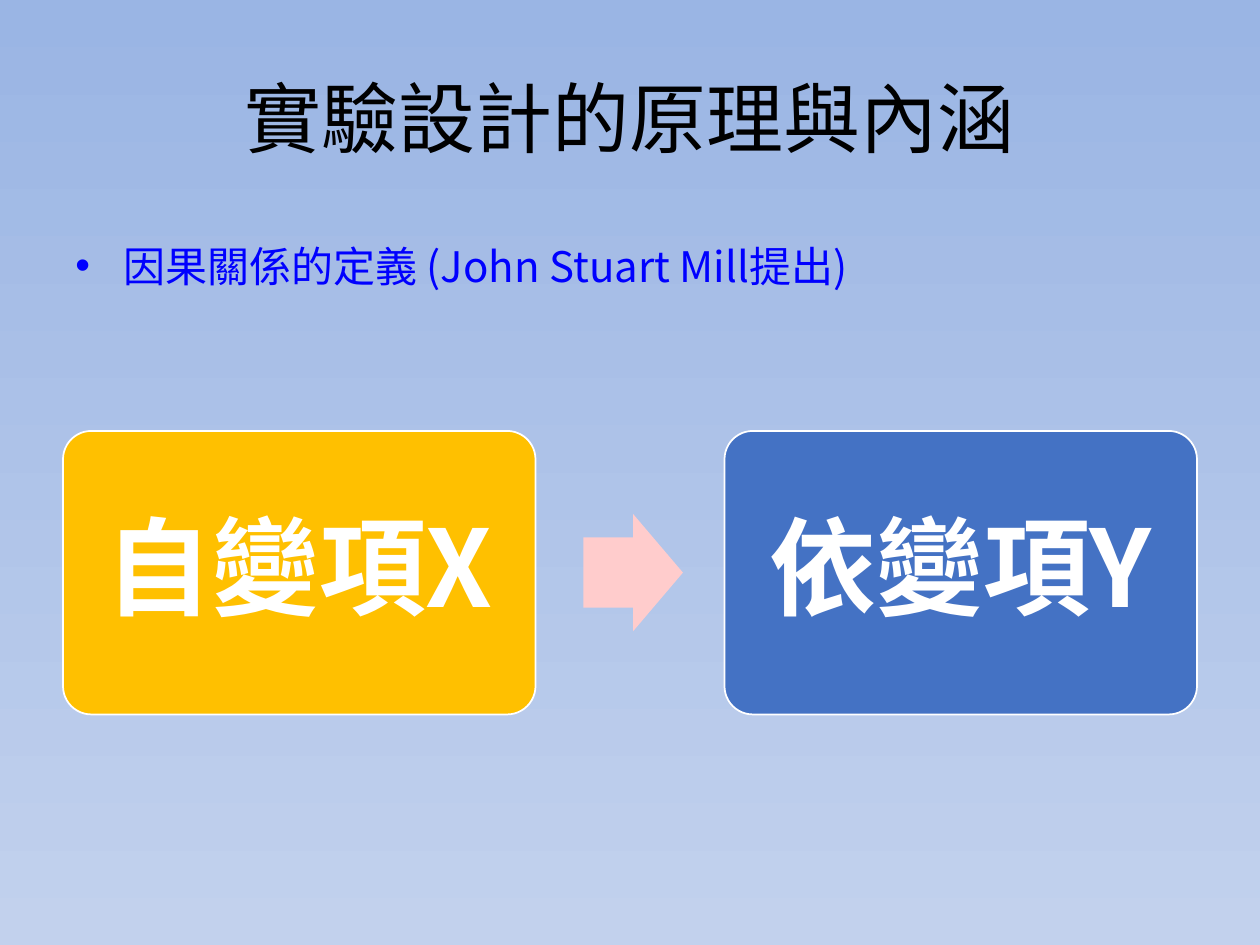
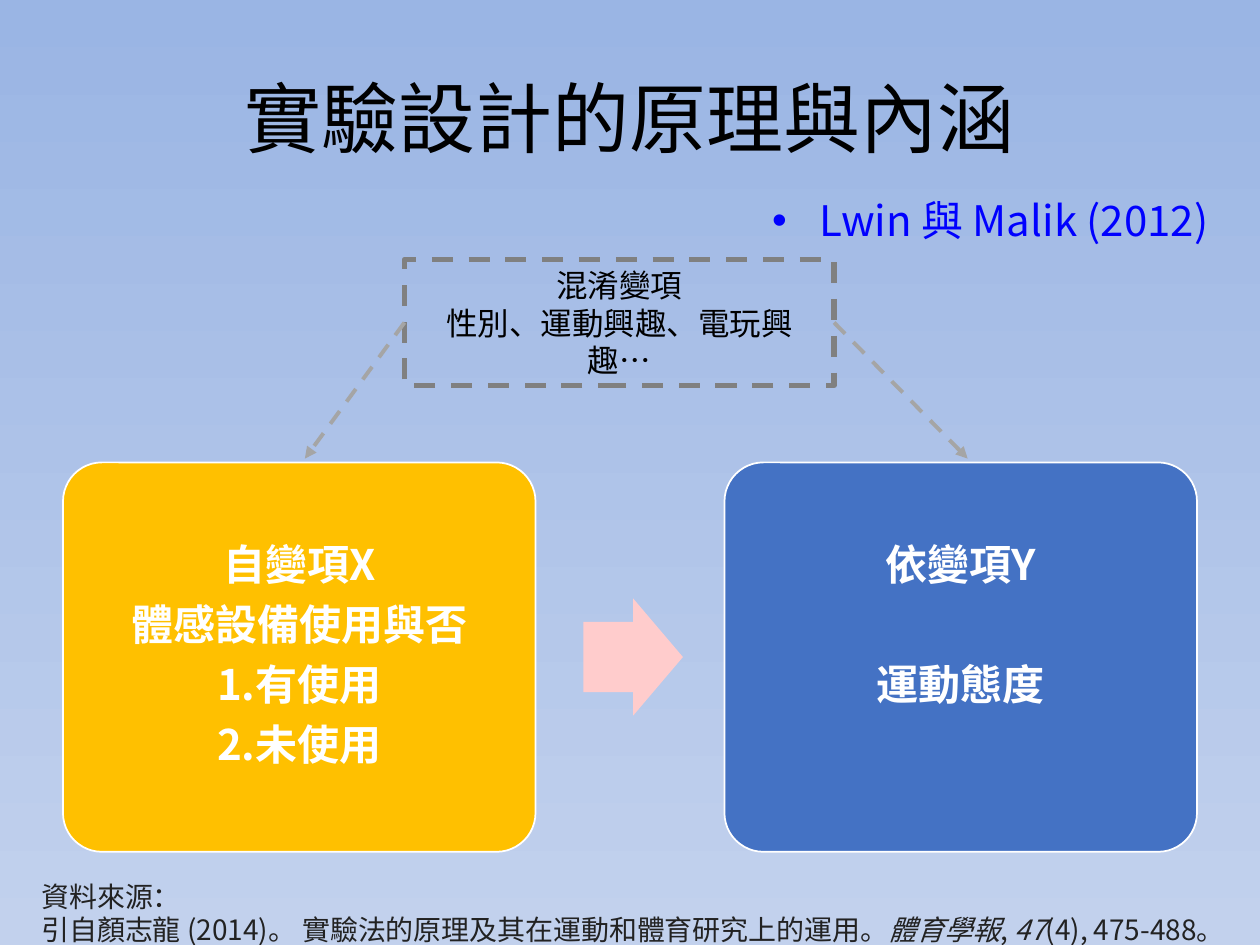
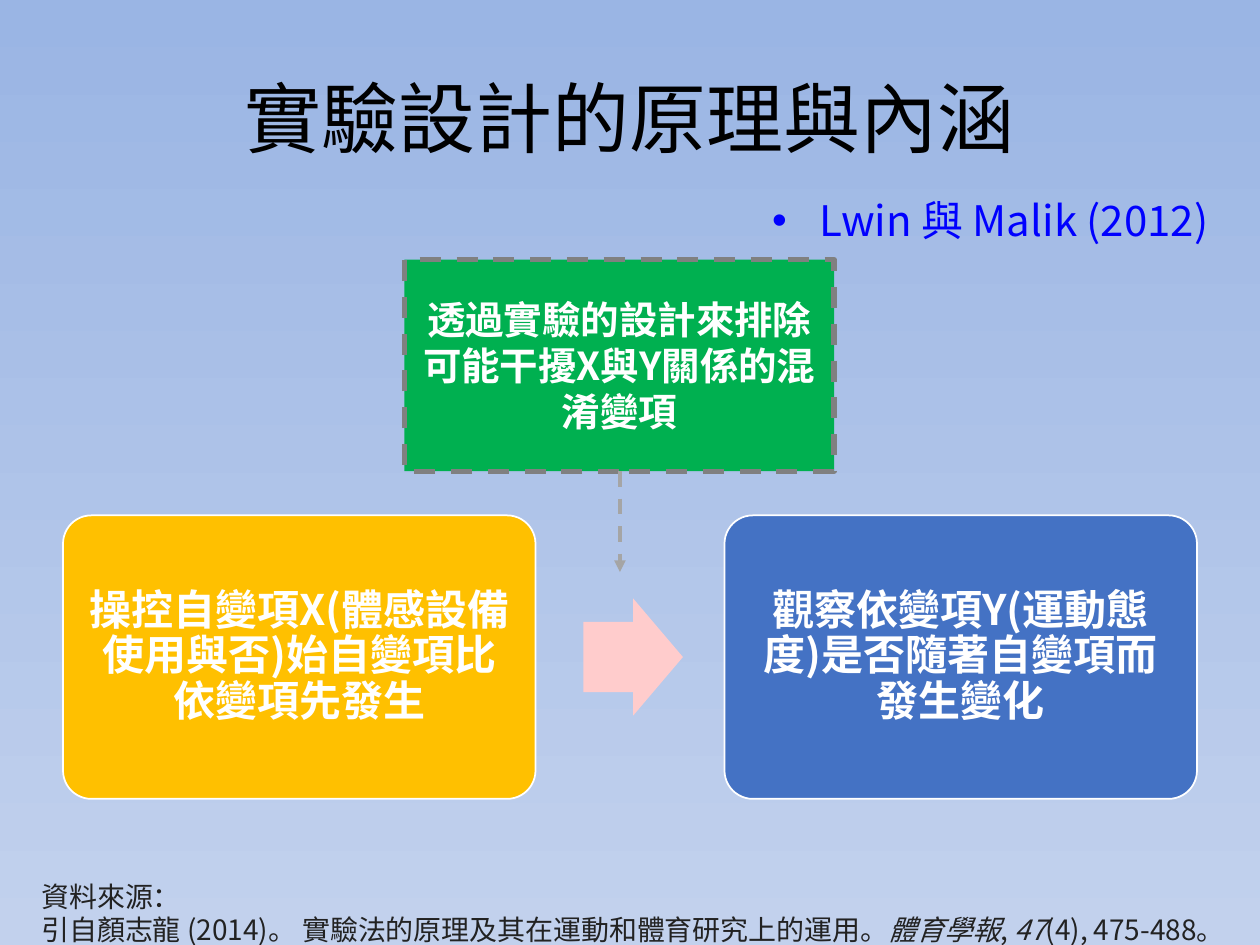
from lxml.etree import SubElement
from pptx import Presentation
from pptx.dml.color import RGBColor
from pptx.enum.dml import MSO_LINE
from pptx.enum.shapes import MSO_CONNECTOR, MSO_SHAPE
from pptx.enum.text import MSO_ANCHOR, PP_ALIGN
from pptx.oxml.ns import qn
from pptx.util import Inches, Pt

TITLE = "實驗設計的原理與內涵"
STUDY = "Lwin 與 Malik (2012)"
SOURCE_LABEL = "資料來源："
CITATION = [
    ("引自顏志龍 (2014)。 實驗法的原理及其在運動和體育研究上的運用。", False),
    ("體育學報", True),
    (", ", False),
    ("47", True),
    ("(4), 475-488。", False),
]


def color(value):
    return RGBColor.from_string(value)


class Lecture:
    FONT = "Noto Sans CJK SC"
    COLUMNS, ROWS = 100, 75
    BLACK, WHITE, BLUE, INK = "000000", "FFFFFF", "0000FF", "222222"
    CAUSE, EFFECT, ARROW = "FFC000", "4472C4", "FFCCCC"
    BORDER, LINK, GREEN = "808080", "A5A5A5", "00B050"

    def __init__(self):
        self.deck = Presentation()
        self.deck.slide_width, self.deck.slide_height = Inches(10), Inches(7.5)
        fill = self.deck.slide_master.background.fill
        fill.gradient()
        fill.gradient_angle = 270
        for stop, value in zip(fill.gradient_stops, ("9AB5E4", "C2D1ED")):
            stop.color.rgb = color(value)
        self.page = None

    def place(self, left, top, width, height):
        column = self.deck.slide_width / self.COLUMNS
        row = self.deck.slide_height / self.ROWS
        return [round(n * unit) for n, unit in
                ((left, column), (top, row), (width, column), (height, row))]

    def format(self, paras, size, value, bold=False):
        for para in paras:
            for span in para.runs:
                font = span.font
                font.size, font.bold, font.name = Pt(size), bold, self.FONT
                font.color.rgb = color(value)
                SubElement(font._element, qn("a:ea"), typeface=self.FONT)

    def start(self):
        self.page = self.deck.slides.add_slide(self.deck.slide_layouts[5])
        title = self.page.shapes.title
        title.left, title.top, title.width, title.height = self.place(5, 3, 90, 12.5)
        frame = title.text_frame
        frame.text = TITLE
        frame.vertical_anchor = MSO_ANCHOR.MIDDLE
        frame.paragraphs[0].alignment = PP_ALIGN.CENTER
        self.format(frame.paragraphs, 44, self.BLACK)

    def text_box(self, *cell):
        frame = self.page.shapes.add_textbox(*self.place(*cell)).text_frame
        frame.word_wrap = True
        return frame

    def bullet(self, text, left, top, width):
        frame = self.text_box(left, top, width, 7.5)
        frame.text = text
        para = frame.paragraphs[0]
        para.line_spacing = Pt(38)
        properties = para._p.get_or_add_pPr()
        properties.set("marL", str(Inches(0.38)))
        properties.set("indent", str(-Inches(0.38)))
        SubElement(properties, qn("a:buFont"), typeface="Arial")
        SubElement(properties, qn("a:buChar"), char="•")
        self.format(frame.paragraphs, 24, self.BLUE)

    def shape(self, kind, cell, fill=None, line=None, weight=1):
        shape = self.page.shapes.add_shape(kind, *self.place(*cell))
        shape.shadow.inherit = False
        if fill:
            shape.fill.solid()
            shape.fill.fore_color.rgb = color(fill)
        else:
            shape.fill.background()
        if line:
            shape.line.color.rgb = color(line)
            shape.line.width = Pt(weight)
        else:
            shape.line.fill.background()
        return shape

    def label(self, shape, lines, size, value, bold=False):
        frame = shape.text_frame
        frame.word_wrap = True
        frame.vertical_anchor = MSO_ANCHOR.MIDDLE
        frame.text = "\n".join(lines)
        for para in frame.paragraphs:
            para.alignment = PP_ALIGN.CENTER
        self.format(frame.paragraphs, size, value, bold)
        return frame

    def variable(self, cell, fill, lines, size, inset):
        shape = self.shape(MSO_SHAPE.ROUNDED_RECTANGLE, cell, fill, self.WHITE)
        shape.adjustments[0] = 0.1
        frame = self.label(shape, lines, size, self.WHITE, True)
        frame.margin_left = frame.margin_right = Inches(inset)
        frame.margin_top = frame.margin_bottom = Inches(inset)
        for para in frame.paragraphs:
            para.line_spacing = 0.9
            para.space_after = Pt(0.35 * size)
        return frame

    def cause_and_effect(self, middle, height, cause, effect, size=24, inset=0.1):
        top = middle - height / 2
        self.variable((5, top, 37.5, height), self.CAUSE, cause, size, inset)
        arrow = self.shape(MSO_SHAPE.RIGHT_ARROW, (46.3, middle - 4.65, 7.9, 9.3), self.ARROW)
        arrow.adjustments[0], arrow.adjustments[1] = 0.6, 0.5
        return self.variable((57.5, top, 37.5, height), self.EFFECT, effect, size, inset)

    def confounder(self, height, lines, size, value, fill=None, bold=False):
        shape = self.shape(MSO_SHAPE.RECTANGLE, (32.1, 20.6, 34.1, height), fill, self.BORDER, 3)
        shape.line.dash_style = MSO_LINE.DASH
        self.label(shape, lines, size, value, bold)

    def link(self, start, end):
        ends = self.place(*start, *end)
        connector = self.page.shapes.add_connector(MSO_CONNECTOR.STRAIGHT, *ends)
        line = connector.line
        line.color.rgb = color(self.LINK)
        line.width = Pt(2.25)
        line.dash_style = MSO_LINE.DASH
        SubElement(line._get_or_add_ln(), qn("a:tailEnd"), type="triangle")
        SubElement(connector._element.spPr, qn("a:effectLst"))

    def source(self):
        frame = self.text_box(2.3, 69.3, 100.2, 6.4)
        frame.text = SOURCE_LABEL
        para = frame.add_paragraph()
        for text, italic in CITATION:
            span = para.add_run()
            span.text = text
            span.font.italic = italic
        self.format(frame.paragraphs, 16, self.INK)

    def study(self):
        self.start()
        self.bullet(STUDY, 60.3, 13.7, 39.7)
        self.source()


def main():
    lecture = Lecture()

    lecture.start()
    lecture.cause_and_effect(45.45, 22.5, ["自變項X"], ["依變項Y"], 61, 0.25)
    lecture.bullet("因果關係的定義 (John Stuart Mill提出)", 5, 17.3, 90)

    lecture.study()
    effect = lecture.cause_and_effect(
        52.15, 30.9,
        ["自變項X", "體感設備使用與否", "1.有使用", "2.未使用"],
        ["依變項Y", "運動態度"])
    effect.paragraphs[1].space_before = Pt(34.3)
    effect.margin_bottom = Inches(0.58)
    lecture.confounder(10, ["混淆變項", "性別、運動興趣、電玩興趣…"], 18, lecture.BLACK)
    lecture.link((32.1, 25.6), (24.2, 36.4))
    lecture.link((66.2, 25.6), (76.8, 36.4))

    lecture.study()
    lecture.cause_and_effect(
        52.15, 22.5,
        ["操控自變項X(體感設備使用與否)始自變項比依變項先發生"],
        ["觀察依變項Y(運動態度)是否隨著自變項而發生變化"])
    lecture.confounder(16.8, ["透過實驗的設計來排除可能干擾X與Y關係的混淆變項"],
                       22, lecture.WHITE, lecture.GREEN, True)
    lecture.link((49.2, 37.4), (49.2, 45.4))

    lecture.deck.save("out.pptx")


if __name__ == "__main__":
    main()
